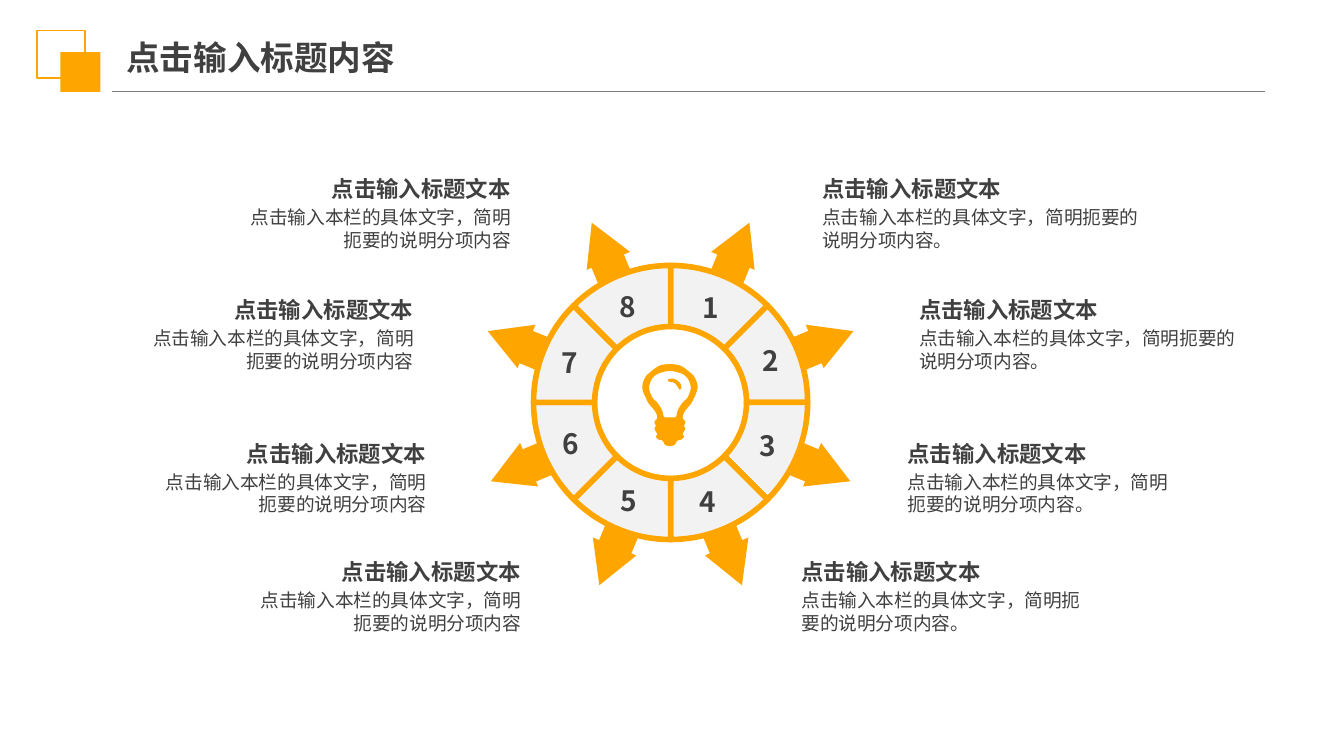
from dataclasses import dataclass
from math import cos, radians, sin

from lxml.etree import SubElement
from pptx import Presentation
from pptx.dml.color import RGBColor as RGB
from pptx.enum.shapes import MSO_CONNECTOR as CONN, MSO_SHAPE as SHAPE
from pptx.enum.text import MSO_ANCHOR as ANCHOR, MSO_AUTO_SIZE as FIT, PP_ALIGN as ALIGN
from pptx.oxml.ns import qn
from pptx.util import Inches, Pt


@dataclass(frozen=True)
class Theme:
    accent: str = "FFA500"
    segment: str = "F2F2F2"
    rule: str = "808080"
    ink: str = "404040"
    font: str = "Noto Sans CJK SC"
    title: float = 18
    number: float = 15
    heading: float = 12
    body: float = 10


THEME = Theme()
CELL = Inches(0.1)
COLS, ROWS = 100, 56.25
CENTER = (49.9, 29.95)
INNER, OUTER = 5.65, 10.2
STEP = 45

HEADING = "点击输入标题文本"
BODY = "点击输入本栏的具体文字，简明扼要的说明分项内容"
CALLOUT_ROWS = (12.4, 21.4, 32.1, 40.9)
CALLOUT_HEIGHT = 6.9
RIGHT_CALLOUTS = ((60.2, 26), (67.4, 26.7), (66.55, 22), (58.65, 23.8))
LEFT_CALLOUTS = ((17.4, 21.6), (10.15, 21.6), (11.1, 21.6), (17.65, 22.1))
NUMBER_CENTERS = ((52.9, 22.9), (57.35, 26.8), (57.15, 33.15), (52.7, 37.3),
                  (46.8, 37.25), (42.5, 33), (42.4, 26.95), (46.7, 22.8))

ARROW = ((5.6, -1), (11.5, -1), (11.5, -1.5), (14.6, 0.3),
         (11.5, 2), (11.5, 1.6), (5.6, 1.6))
BULB_AXIS = 49.85
BULB_OUTER = ((0, 27.1), (0.75, 27.2), (1.35, 27.6), (1.85, 28.1), (2.05, 28.9),
              (1.65, 29.9), (1.35, 30.3), (1.05, 30.7), (0.95, 31.1), (1.15, 31.4),
              (1.05, 31.7), (1.15, 31.9), (0.95, 32.3), (1.05, 32.5), (0.85, 32.7),
              (0.55, 32.8), (0.35, 33.1), (0, 33.2))
BULB_INNER = ((0, 27.6), (0.55, 27.7), (1.05, 27.9), (1.4, 28.3), (1.55, 28.9),
              (1.3, 29.6), (0.95, 29.95), (0.6, 30.5), (0.45, 31), (0.2, 31.05))
GLINT = ((49.7, 28.3), (49.8, 28.2), (50.2, 28.2), (50.6, 28.5), (50.7, 28.8),
         (50.6, 29), (50.5, 28.9), (50.2, 28.5), (49.8, 28.4))


def cells(*values):
    return [round(v * CELL) for v in values]


def paint(sp, fill=None, line=None, width=1):
    sp.shadow.inherit = False
    if fill:
        sp.fill.solid()
        sp.fill.fore_color.rgb = RGB.from_string(fill)
    else:
        sp.fill.background()
    if line:
        sp.line.color.rgb = RGB.from_string(line)
        sp.line.width = Pt(width)
    else:
        sp.line.fill.background()


def add_text(p, text, size, bold=False, align=ALIGN.LEFT, before=None):
    p.alignment = align
    if before:
        p.space_before = Pt(before)
    r = p.add_run()
    r.text = text
    r.font.size = Pt(size)
    r.font.bold = bold
    r.font.color.rgb = RGB.from_string(THEME.ink)
    r.font.name = THEME.font
    SubElement(r._r.get_or_add_rPr(), qn("a:ea"), typeface=THEME.font)


def add_box(s, x, y, w, h):
    tf = s.shapes.add_textbox(*cells(x, y, w, h)).text_frame
    tf.word_wrap = True
    tf.vertical_anchor = ANCHOR.MIDDLE
    return tf


def add_outline(s, *contours, **look):
    first, *others = [[cells(*point) for point in c] for c in contours]
    builder = s.shapes.build_freeform(*first[0], scale=1.0)
    builder.add_line_segments(first[1:], close=True)
    for contour in others:
        builder.move_to(*contour[0])
        builder.add_line_segments(contour[1:], close=True)
    paint(builder.convert_to_shape(), **look)


def add_square(s, x, y, side, **look):
    paint(s.shapes.add_shape(SHAPE.RECTANGLE, *cells(x, y, side, side)), **look)


def add_rule(s, x1, x2, y):
    line = s.shapes.add_connector(CONN.STRAIGHT, *cells(x1, y, x2, y))
    line.line.color.rgb = RGB.from_string(THEME.rule)
    line.line.width = Pt(0.75)
    SubElement(line._element.spPr, qn("a:effectLst"))


def polar(radius, angle, offset=0):
    a = radians(angle)
    return (CENTER[0] + radius * cos(a) - offset * sin(a),
            CENTER[1] + radius * sin(a) + offset * cos(a))


def mirrored(half):
    right = [(BULB_AXIS + x, y) for x, y in half]
    return right + [(BULB_AXIS - x, y) for x, y in reversed(half) if x]


def smooth(points, steps=5):
    def blend(a, b, c, d, t):
        return b + t / 2 * (c - a + t * (2 * a - 5 * b + 4 * c - d + t * (3 * (b - c) + d - a)))

    n = len(points)
    curve = []
    for i in range(n):
        near = [points[(i + k) % n] for k in (-1, 0, 1, 2)]
        curve += [tuple(blend(*axis, k / steps) for axis in zip(*near)) for k in range(steps)]
    return curve


def add_arrow(s, index):
    angle = -90 + STEP * (index + 0.5)
    side = 1 if index < 4 else -1
    add_outline(s, [polar(r, angle, side * off) for r, off in ARROW], fill=THEME.accent)


def add_segment(s, index):
    start = -90 + STEP * index
    angles = range(start, start + STEP + 1, 3)
    ring = [polar(OUTER, a) for a in angles] + [polar(INNER, a) for a in reversed(angles)]
    add_outline(s, ring, fill=THEME.segment, line=THEME.accent, width=3)


def add_callout(s, x, y, w, body, align):
    tf = add_box(s, x, y, w, CALLOUT_HEIGHT)
    add_text(tf.paragraphs[0], HEADING, THEME.heading, bold=True, align=align)
    add_text(tf.add_paragraph(), body, THEME.body, align=align, before=2)


def add_number(s, number, x, y):
    tf = add_box(s, x - 2, y - 1.1, 4, 2.2)
    add_text(tf.paragraphs[0], str(number), THEME.number, bold=True, align=ALIGN.CENTER)


def add_header(s, text):
    add_rule(s, 8.3, 94.1, 6.83)
    add_square(s, 2.75, 2.27, 3.55, line=THEME.accent)
    add_square(s, 4.5, 3.88, 2.97, fill=THEME.accent)
    sp = s.shapes.title
    sp.left, sp.top, sp.width, sp.height = cells(9.4, 2.15, 23.3, 4.2)
    tf = sp.text_frame
    tf.auto_size = FIT.NONE
    tf.vertical_anchor = ANCHOR.MIDDLE
    tf.margin_left = tf.margin_right = 0
    add_text(tf.paragraphs[0], text, THEME.title, bold=True)


def main():
    prs = Presentation()
    prs.slide_width, prs.slide_height = cells(COLS, ROWS)
    s = prs.slides.add_slide(prs.slide_layouts[5])
    add_header(s, "点击输入标题内容")
    for add_part in (add_arrow, add_segment):
        for index in range(len(NUMBER_CENTERS)):
            add_part(s, index)
    add_outline(s, smooth(mirrored(BULB_OUTER)), smooth(mirrored(BULB_INNER)), fill=THEME.accent)
    add_outline(s, smooth(GLINT), fill=THEME.accent)
    for columns, body, align in ((RIGHT_CALLOUTS, BODY + "。", ALIGN.LEFT),
                                 (LEFT_CALLOUTS, BODY, ALIGN.RIGHT)):
        for (x, w), y in zip(columns, CALLOUT_ROWS):
            add_callout(s, x, y, w, body, align)
    for number, (x, y) in enumerate(NUMBER_CENTERS, 1):
        add_number(s, number, x, y)
    prs.save("out.pptx")


if __name__ == "__main__":
    main()
